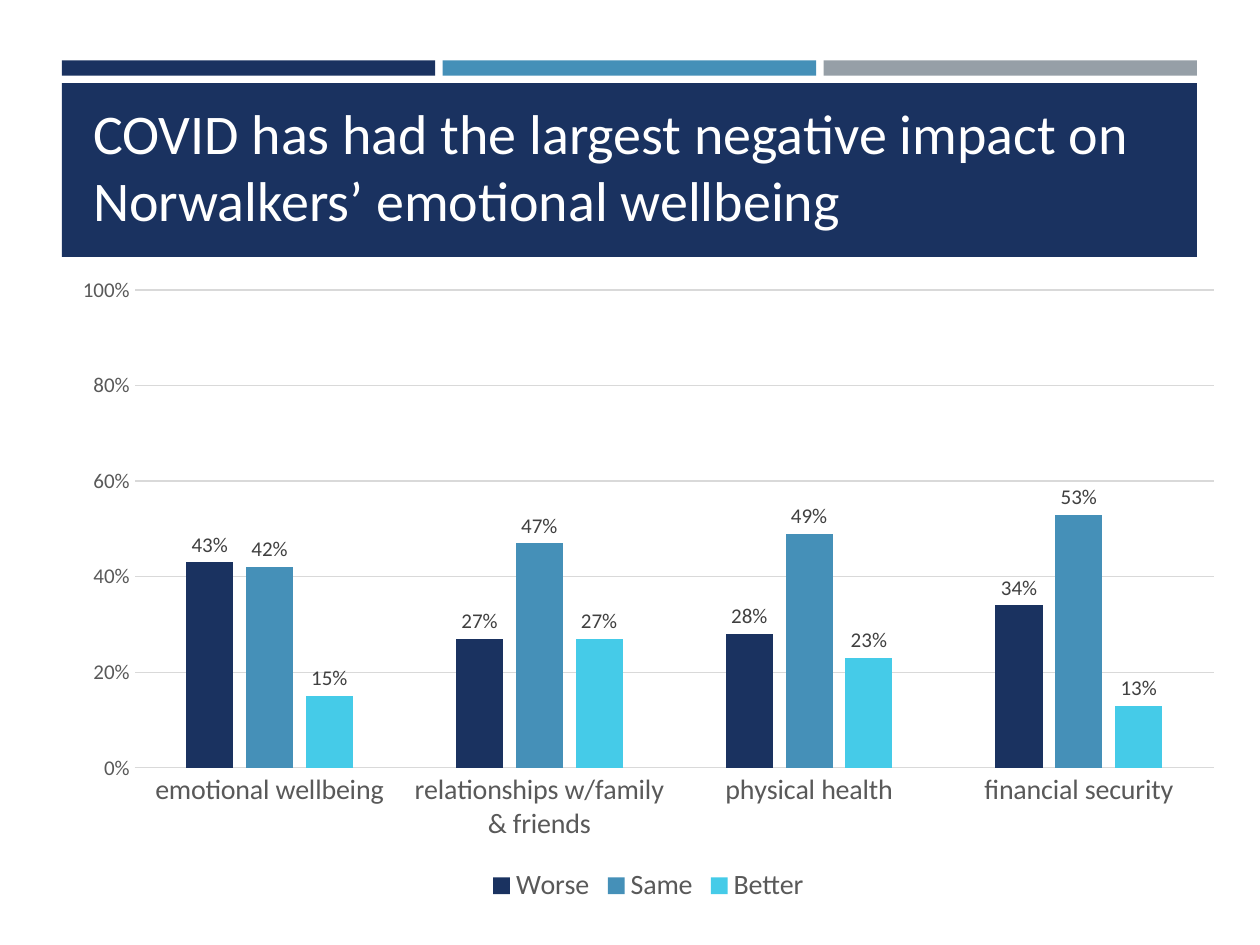
from pptx import Presentation
from pptx.chart.data import CategoryChartData
from pptx.dml.color import RGBColor
from pptx.enum.chart import XL_CHART_TYPE as ChartType, XL_LABEL_POSITION as LabelPosition
from pptx.enum.chart import XL_LEGEND_POSITION as LegendPosition, XL_TICK_MARK as TickMark
from pptx.enum.shapes import MSO_SHAPE as Shape
from pptx.enum.text import MSO_ANCHOR as Anchor
from pptx.util import Inches, Pt

NAVY = RGBColor(0x1A, 0x32, 0x60)
BLUE = RGBColor(0x45, 0x90, 0xB8)
CYAN = RGBColor(0x45, 0xCB, 0xE8)
GRAY = RGBColor(0x96, 0x9F, 0xA7)
WHITE = RGBColor(0xFF, 0xFF, 0xFF)
BLACK = RGBColor(0, 0, 0)
LABEL_TEXT = RGBColor(0x40, 0x40, 0x40)
AXIS_TEXT = RGBColor(0x59, 0x59, 0x59)
GRID = RGBColor(0xD9, 0xD9, 0xD9)

TITLE = "COVID has had the largest negative impact on Norwalkers’ emotional wellbeing"
CATEGORIES = ["emotional wellbeing", "relationships w/family & friends",
              "physical health", "financial security"]
SERIES = [
    ("Worse", (0.43, 0.27, 0.28, 0.34), NAVY),
    ("Same", (0.42, 0.47, 0.49, 0.53), BLUE),
    ("Better", (0.15, 0.27, 0.23, 0.13), CYAN),
]
STRIPES = [NAVY, BLUE, GRAY]
LEFT, WIDTH, STRIPE_GAP = 0.49, 9.01, 0.06


def set_values(target, values):
    for name, value in values.items():
        setattr(target, name, value)


def style_font(font, size, color):
    set_values(font, {"name": "Calibri", "size": Pt(size), "bold": False})
    font.color.rgb = color


def style_line(line):
    line.color.rgb = GRID
    line.width = Pt(0.75)


def add_band(slide, left, top, width, height, color):
    shape = slide.shapes.add_shape(
        Shape.RECTANGLE, Inches(left), Inches(top), Inches(width), Inches(height))
    shape.shadow.inherit = False
    shape.fill.solid()
    shape.fill.fore_color.rgb = color
    shape.line.fill.background()


def add_header(slide):
    stripe_width = (WIDTH - STRIPE_GAP * (len(STRIPES) - 1)) / len(STRIPES)
    for index, color in enumerate(STRIPES):
        left = LEFT + index * (stripe_width + STRIPE_GAP)
        add_band(slide, left, 0.48, stripe_width, 0.12, color)
    add_band(slide, LEFT, 0.66, WIDTH, 1.38, NAVY)

    title = slide.shapes.add_textbox(Inches(0.64), Inches(0.95), Inches(8.74), Inches(0.95))
    set_values(title.text_frame, {"word_wrap": True, "vertical_anchor": Anchor.BOTTOM})
    run = title.text_frame.paragraphs[0].add_run()
    run.text = TITLE
    style_font(run.font, 32, WHITE)


def add_impact_chart(slide):
    data = CategoryChartData(number_format="0%")
    data.categories = CATEGORIES
    for name, values, _ in SERIES:
        data.add_series(name, values)
    chart = slide.shapes.add_chart(
        ChartType.COLUMN_CLUSTERED, Inches(0.47), Inches(2.1),
        Inches(9.35), Inches(5.11), data).chart
    set_values(chart, {"has_title": False, "has_legend": True})
    style_font(chart.font, 10, BLACK)
    set_values(chart.legend, {"position": LegendPosition.BOTTOM, "include_in_layout": False})
    style_font(chart.legend.font, 16, AXIS_TEXT)

    for axis, size in ((chart.category_axis, 16), (chart.value_axis, 12)):
        set_values(axis, {"major_tick_mark": TickMark.NONE, "minor_tick_mark": TickMark.NONE})
        style_font(axis.tick_labels.font, size, AXIS_TEXT)
    style_line(chart.category_axis.format.line)
    value_axis = chart.value_axis
    set_values(value_axis, {"minimum_scale": 0, "maximum_scale": 1, "major_unit": 0.2,
                            "has_major_gridlines": True})
    set_values(value_axis.tick_labels, {"number_format": "0%", "number_format_is_linked": False})
    value_axis.format.line.fill.background()
    style_line(value_axis.major_gridlines.format.line)

    plot = chart.plots[0]
    set_values(plot, {"gap_width": 219, "overlap": -27, "vary_by_categories": False})
    for series, (_, _, color) in zip(plot.series, SERIES):
        series.format.fill.solid()
        series.format.fill.fore_color.rgb = color
        labels = series.data_labels
        set_values(labels, {"show_value": True, "number_format": "0%",
                            "number_format_is_linked": False,
                            "position": LabelPosition.OUTSIDE_END})
        style_font(labels.font, 12, LABEL_TEXT)


def main():
    presentation = Presentation()
    set_values(presentation, {"slide_width": Inches(10), "slide_height": Inches(7.5)})
    slide = presentation.slides.add_slide(presentation.slide_layouts[6])
    add_header(slide)
    add_impact_chart(slide)
    presentation.save("out.pptx")


if __name__ == "__main__":
    main()
